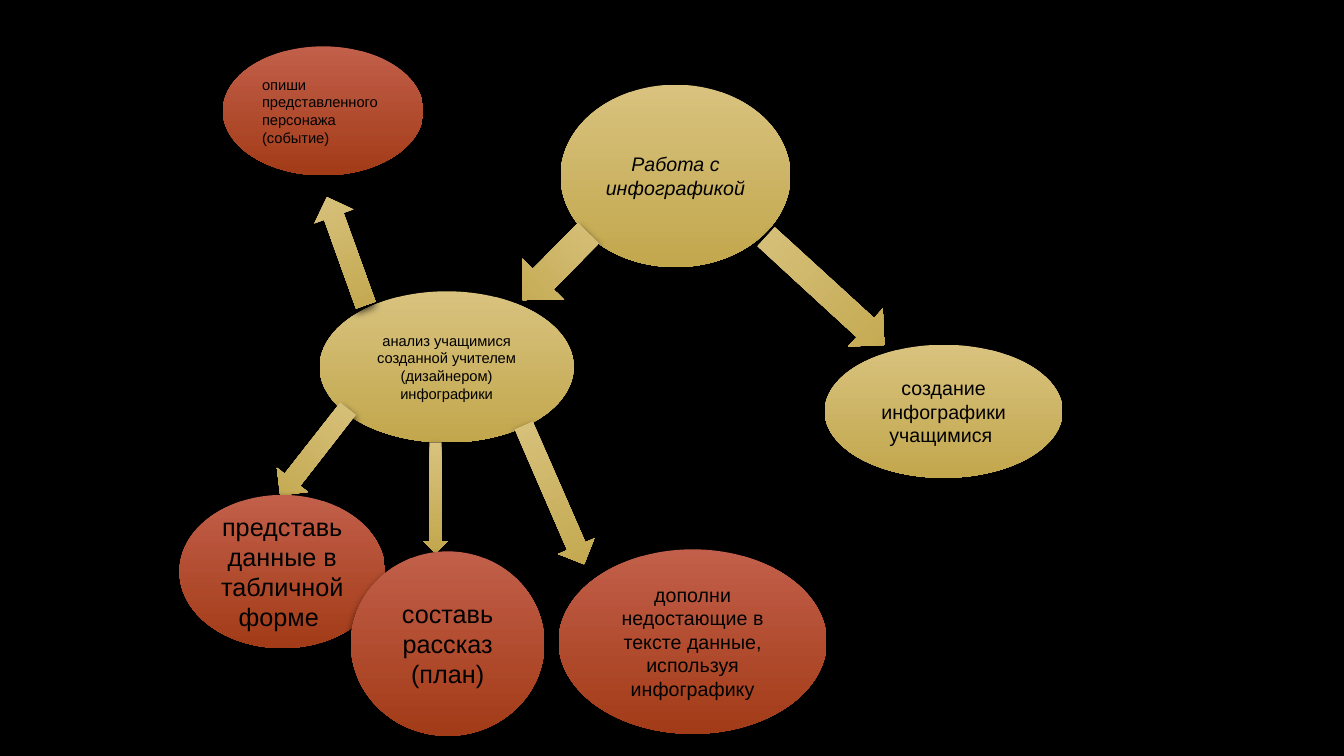
from lxml import etree
from pptx import Presentation
from pptx.dml.color import RGBColor
from pptx.enum.shapes import MSO_SHAPE
from pptx.enum.text import MSO_ANCHOR, PP_ALIGN
from pptx.oxml.ns import qn
from pptx.util import Inches, Pt

OVAL, DOWN, UP = MSO_SHAPE.OVAL, MSO_SHAPE.DOWN_ARROW, MSO_SHAPE.UP_ARROW
LEFT, CENTER = PP_ALIGN.LEFT, PP_ALIGN.CENTER
MIDDLE = MSO_ANCHOR.MIDDLE
BLACK = RGBColor(0x00, 0x00, 0x00)
GOLD = (RGBColor(0xD8, 0xC2, 0x7E), RGBColor(0xC2, 0xA7, 0x4D))
RED = (RGBColor(0xC2, 0x5F, 0x4A), RGBColor(0xA2, 0x3B, 0x17))
FONT = "Arial"

TOPIC = ("Работа с инфографикой ", (5.56, 0.84, 2.28, 1.81), GOLD, 14, CENTER, True)
TOPIC_ARROWS = [
    (DOWN, (5.22, 2.18, 0.58, 0.93), 44.5),
    (DOWN, (7.93, 2.09, 0.51, 1.59), 312.5),
]
BRANCHES = [
    ("анализ учащимися созданной учителем (дизайнером) инфографики",
     (3.17, 2.89, 2.52, 1.5), GOLD, 10.5, CENTER, False),
    ("создание инфографики учащимися ",
     (8.18, 3.42, 2.36, 1.32), GOLD, 14, CENTER, False),
]
TASK_ARROWS = [
    (DOWN, (2.92, 3.94, 0.39, 1.09), 38),
    (DOWN, (4.2, 4.39, 0.24, 1.1), 0),
    (DOWN, (5.3, 4.16, 0.39, 1.5), 336.5),
    (UP, (3.23, 1.92, 0.41, 1.14), 340.2),
]
TASKS = [
    ("опиши представленного персонажа (событие)",
     (2.21, 0.46, 1.99, 1.28), RED, 10.5, LEFT, False),
    ("представь данные в табличной форме ",
     (1.78, 4.91, 2.04, 1.52), RED, 18, CENTER, False),
    ("составь рассказ (план)",
     (3.48, 5.47, 1.92, 1.83), RED, 18, CENTER, False),
    ("дополни недостающие в тексте данные, используя инфографику",
     (5.54, 5.45, 2.66, 1.83), RED, 14, CENTER, False),
]


def add_shadow(shape):
    shape.shadow.inherit = False
    effects = shape._element.spPr.find(qn("a:effectLst"))
    shadow = etree.SubElement(effects, qn("a:outerShdw"), blurRad=str(Pt(6)),
                              dist=str(Pt(3)), dir="5400000", rotWithShape="0")
    color = etree.SubElement(shadow, qn("a:srgbClr"), val=str(BLACK))
    etree.SubElement(color, qn("a:alpha"), val="75000")


def add_figure(slide, kind, box, colors):
    shape = slide.shapes.add_shape(kind, *map(Inches, box))
    shape.fill.gradient()
    shape.fill.gradient_angle = 270
    for stop, color, position in zip(shape.fill.gradient_stops, colors, (0, 1)):
        stop.color.rgb = color
        stop.position = position
    shape.line.fill.background()
    add_shadow(shape)
    return shape


def add_bubble(slide, text, box, colors, size, alignment, italic):
    text_frame = add_figure(slide, OVAL, box, colors).text_frame
    text_frame.word_wrap = True
    text_frame.vertical_anchor = MIDDLE
    text_frame.text = text
    paragraph = text_frame.paragraphs[0]
    paragraph.alignment = alignment
    font = paragraph.runs[0].font
    font.name, font.size, font.italic = FONT, Pt(size), italic
    font.color.rgb = BLACK


def add_arrow(slide, kind, box, rotation):
    add_figure(slide, kind, box, GOLD).rotation = rotation


def main():
    presentation = Presentation()
    presentation.slide_width, presentation.slide_height = Inches(13.33), Inches(7.5)
    slide = presentation.slides.add_slide(presentation.slide_layouts[6])
    slide.background.fill.solid()
    slide.background.fill.fore_color.rgb = BLACK
    layers = [
        (add_bubble, [TOPIC]),
        (add_arrow, TOPIC_ARROWS),
        (add_bubble, BRANCHES),
        (add_arrow, TASK_ARROWS),
        (add_bubble, TASKS),
    ]
    for add_item, items in layers:
        for item in items:
            add_item(slide, *item)
    presentation.save("out.pptx")


if __name__ == "__main__":
    main()
